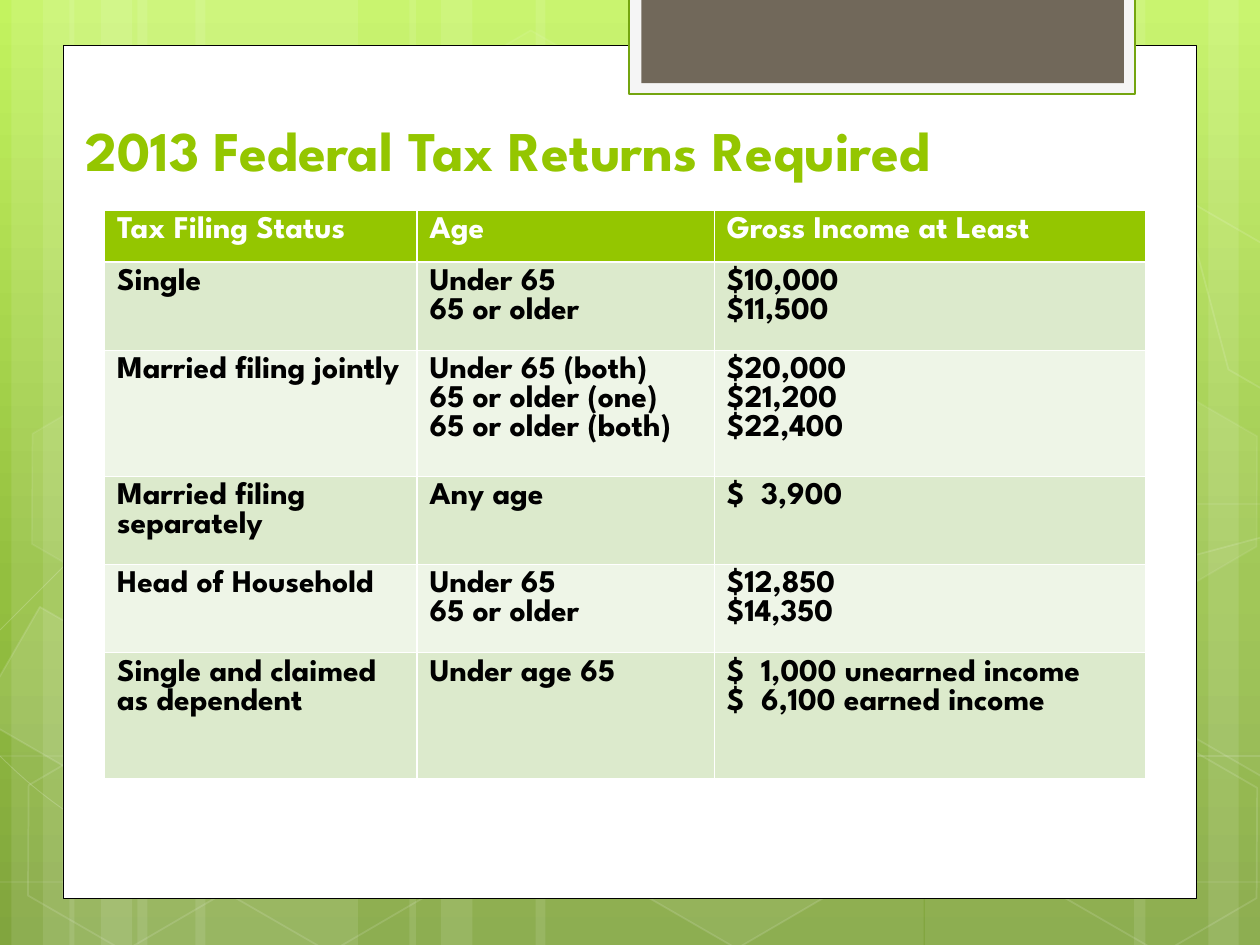
"""Build a slide with a table of 2013 federal tax filing limits on a green backdrop."""
from copy import deepcopy
from math import cos, radians, sin

from lxml import etree
from pptx import Presentation
from pptx.dml.color import RGBColor
from pptx.enum.shapes import MSO_SHAPE
from pptx.enum.text import MSO_ANCHOR, MSO_AUTO_SIZE, PP_ALIGN
from pptx.oxml.ns import qn
from pptx.util import Inches, Pt

RECT, HEX = MSO_SHAPE.RECTANGLE, MSO_SHAPE.HEXAGON
BOTTOM, LEFT, FIXED = MSO_ANCHOR.BOTTOM, PP_ALIGN.LEFT, MSO_AUTO_SIZE.NONE
FONT = "League Spartan"
HUES = {
    "white": "FFFFFF", "black": "000000", "green": "94C600", "edge": "74A510",
    "frame": "F5F5F5", "tab": "71685A", "odd": "DCEACC", "even": "EEF5E7",
    "top": "C3F35F", "mid": "93BF3F", "base": "81A53E",
}


def paint(shape, fill=None, line=None, width=1, clear=100, faint=100):
    """Set fill and line; clear and faint are their opacities in percent."""
    shape.shadow.inherit = False
    for part, hue, rate in ((shape.fill, fill, clear), (shape.line.fill, line, faint)):
        if hue is None:
            part.background()
            continue
        part.solid()
        part.fore_color.rgb = RGBColor.from_string(HUES[hue])
        if rate < 100:
            props = shape.element.spPr
            home = props if part is shape.fill else props.find(qn("a:ln"))
            tone = home.find(qn("a:solidFill")).find(qn("a:srgbClr"))
            etree.SubElement(tone, qn("a:alpha")).set("val", str(rate * 1000))
    if line:
        shape.line.width = Pt(width)


def write(para, text, size, hue):
    """Add one bold run to a paragraph."""
    run = para.add_run()
    run.text = text
    run.font.name, run.font.size, run.font.bold = FONT, Pt(size), True
    run.font.color.rgb = RGBColor.from_string(HUES[hue])


deck = Presentation()
deck.slide_width, deck.slide_height = Inches(10), Inches(7.5)
slide = deck.slides.add_slide(deck.slide_layouts[5])

back = slide.background.fill
back.gradient()
back.gradient_angle = 270
stops = slide.element.find(".//" + qn("a:gsLst"))
stops.insert(1, deepcopy(stops[0]))
for stop, hue, place in zip(back.gradient_stops, ("top", "mid", "base"), (0, 0.62, 1)):
    stop.color.rgb = RGBColor.from_string(HUES[hue])
    stop.position = place

art = slide.shapes.add_group_shape().shapes

bands = [
    (1.09, 1.75, 0), (0.09, 0.5, 0), (0.34, 0.83, 0), (1.55, 1.75, 0),
    (0.55, 0.5, 0), (0.8, 0.83, 0), (7.34, 1.75, 180), (9.59, 0.5, 180),
    (9, 0.83, 180), (4.25, 3.08, 0), (3.25, 0.5, 0), (3.5, 0.83, 0),
]
for left, width, turn in bands:
    band = art.add_shape(RECT, Inches(left), 0, Inches(width), Inches(7.5))
    band.rotation = turn
    paint(band, "white", clear=10)

curves = [
    [(0.07, 6.73), (0.61, 6.76), (1.15, 6.79), (1.9, 6.78), (2.65, 6.77), (3.58, 6.75),
     (4.58, 6.65), (5.58, 6.55), (7, 6.36), (7.92, 6.17), (8.83, 5.98), (9.77, 5.68),
     (10.07, 5.51)],
    [(0.07, 4.77), (0.36, 4.61), (0.65, 4.46), (1.21, 4.31), (1.78, 4.16), (2.59, 3.94),
     (3.47, 3.87), (4.36, 3.8), (5.44, 3.79), (6.54, 3.87), (7.64, 3.95), (9.47, 4.26),
     (10.07, 4.34)],
    [(0.06, 6.17), (1.27, 6.72), (2.47, 7.27), (3.35, 7.49)],
    [(0.07, 5.78), (0.38, 5.89), (0.7, 6), (1.28, 6.16), (1.86, 6.31), (2.73, 6.56),
     (3.57, 6.73), (4.4, 6.9), (5.45, 7.08), (6.28, 7.18), (7.11, 7.29), (8, 7.33),
     (8.53, 7.36), (9.06, 7.4), (9.19, 7.38), (9.45, 7.38), (9.71, 7.37), (9.89, 7.35),
     (10.07, 7.34)],
    [(2.42, 7.49), (2.6, 7.29), (2.78, 7.09), (3.02, 6.91), (3.26, 6.72), (3.6, 6.53),
     (3.88, 6.39), (4.16, 6.25), (4.33, 6.19), (4.69, 6.09), (5.06, 5.99), (5.73, 5.85),
     (6.08, 5.78), (6.44, 5.71), (6.49, 5.71), (6.8, 5.69), (7.11, 5.66), (7.6, 5.63),
     (7.94, 5.62), (8.29, 5.61), (8.86, 5.62), (8.86, 5.62), (9.08, 5.62), (9.31, 5.62),
     (9.53, 5.62), (9.71, 5.63), (9.88, 5.64), (9.97, 5.65), (10.06, 5.66), (10.03, 5.65),
     (10.06, 5.66)],
]
for dots in curves:
    pen = art.build_freeform(*dots[0], scale=Inches(1))
    pen.add_line_segments(dots[1:], close=False)
    curve = pen.convert_to_shape()
    trace = curve.element.find(".//" + qn("a:path"))
    steps = trace.findall(qn("a:lnTo"))
    for start in range(0, len(steps), 3):
        bend = etree.SubElement(trace, qn("a:cubicBezTo"))
        for step in steps[start:start + 3]:
            bend.append(step[0])
            trace.remove(step)
    paint(curve, line="white", width=0.5, faint=20)

cells = [
    (3.34, 0.36, 4, 8), (4.97, 5.89, 6, 12), (0.11, 5.91, 0, 12), (0.14, 3.12, 7, 8),
    (1.74, 5.92, 0, 12), (7.53, 4.53, 10, 12), (8.34, 5.93, 0, 12), (8.34, 3.14, 7, 8),
]
for left, top, clear, faint in cells:
    cell = art.add_shape(HEX, Inches(left), Inches(top), Inches(1.75), Inches(1.52))
    cell.rotation = 30
    cell.adjustments[0], cell.adjustments[1] = 0.285, 1.155
    paint(cell, "white" if clear else None, "white", 1, clear, faint)

parts = [
    ((0.36, 5.36), 10, [(0.08, 4.45), (0.19, 4.38), (0.96, 4.83), (0.95, 5.7),
                        (0.2, 6.14), (0.09, 6.07)]),
    ((9.85, 5.2), 4, [(9.26, 4.85), (10.02, 4.41), (10.09, 4.46), (10.09, 6.13),
                      (10.02, 6.17), (9.26, 5.73)]),
    ((9.85, 2.41), 0, [(9.26, 2.07), (10.02, 1.63), (10.1, 1.68), (10.09, 3.35),
                       (10.02, 3.39), (9.26, 2.95)]),
]
cosine, sine = cos(radians(30)), sin(radians(30))
for (mid, row), clear, dots in parts:
    spun = [(mid + (x - mid) * cosine + (y - row) * sine,
             row - (x - mid) * sine + (y - row) * cosine) for x, y in dots]
    pen = art.build_freeform(*spun[0], scale=Inches(1))
    pen.add_line_segments(spun[1:])
    part = pen.convert_to_shape()
    part.rotation = 30
    paint(part, "white" if clear else None, "white", 1, clear, 12)

panels = [
    ((0.5, 0.36, 9, 6.77), "white", "black", 0.5),
    ((4.99, -0.02, 4.02, 0.77), "frame", "edge", 1.25),
    ((5.09, -0.02, 3.83, 0.68), "tab", None, 0),
]
for box, fill, line, width in panels:
    paint(slide.shapes.add_shape(RECT, *map(Inches, box)), fill, line, width)

title = slide.shapes.title
title.left, title.top, title.width, title.height = map(Inches, (0.58, 0.67, 8.75, 0.83))
frame = title.text_frame
frame.auto_size, frame.vertical_anchor, frame.word_wrap = FIXED, BOTTOM, True
frame.paragraphs[0].alignment = LEFT
write(frame.paragraphs[0], "2013 Federal Tax Returns Required", 32, "green")
slide.shapes.element.append(title.element)

rows = [
    ("Tax Filing Status", "Age", "Gross Income at Least"),
    ("Single", "Under 65\n65 or older", "$10,000\n$11,500"),
    ("Married filing jointly", "Under 65 (both)\n65 or older (one)\n65 or older (both)",
     "$20,000\n$21,200\n$22,400"),
    ("Married filing separately", "Any age", "$  3,900"),
    ("Head of Household", "Under 65\n65 or older", "$12,850\n$14,350"),
    ("Single and claimed as dependent", "Under age 65",
     "$  1,000 unearned income\n$  6,100 earned income"),
]
grid = slide.shapes.add_table(6, 3, *map(Inches, (0.83, 1.67, 8.25, 4.51))).table
for col, width in zip(grid.columns, (2.48, 2.36, 3.42)):
    col.width = Inches(width)
for row, height in zip(grid.rows, (0.41, 0.7, 1, 0.7, 0.7, 1)):
    row.height = Inches(height)
for i, row in enumerate(rows):
    for j, text in enumerate(row):
        cell = grid.cell(i, j)
        cell.fill.solid()
        hue = "green" if i == 0 else "odd" if i % 2 else "even"
        cell.fill.fore_color.rgb = RGBColor.from_string(HUES[hue])
        frame = cell.text_frame
        for k, line in enumerate(text.split("\n")):
            para = frame.add_paragraph() if k else frame.paragraphs[0]
            write(para, line, 18, "black" if i else "white")

deck.save("out.pptx")
